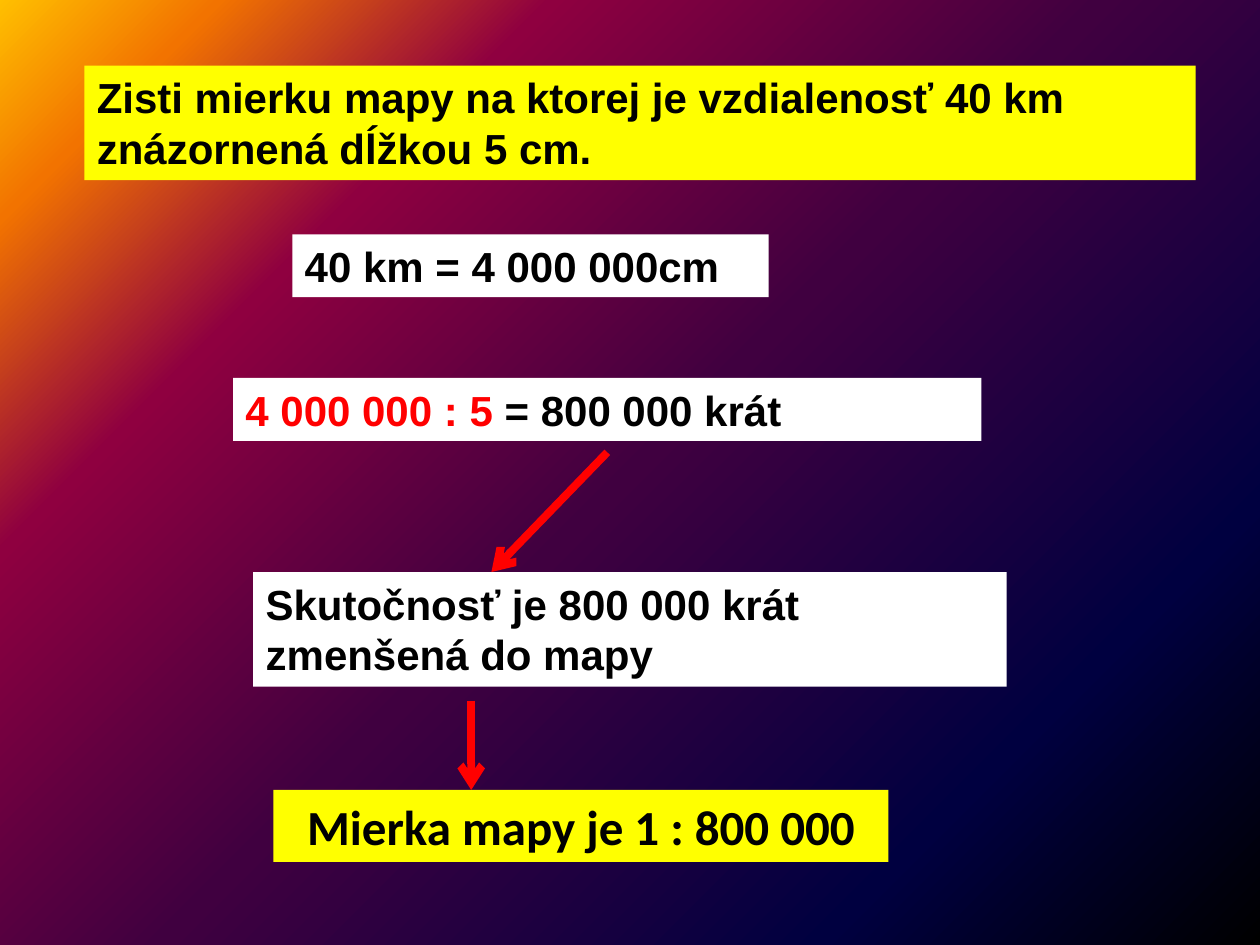
"""Build a slide that works out a map scale step by step."""
from typing import NamedTuple

from pptx import Presentation
from pptx.dml.color import RGBColor as RGB
from pptx.enum.shapes import MSO_CONNECTOR as Conn
from pptx.enum.text import MSO_AUTO_SIZE as AutoSize, PP_ALIGN as Align
from pptx.oxml import parse_xml
from pptx.oxml.ns import nsdecls
from pptx.util import Inches, Pt

COLS, ROWS = 100, 75
WIDTH, HEIGHT = Inches(10), Inches(7.5)
COLORS = {"yellow": "FFFF00", "white": "FFFFFF", "black": "000000", "red": "FF0000"}
GRADIENT = {0: "000000", 20: "000040", 50: "400040", 75: "8F0040", 90: "F27300", 100: "FFBF00"}


class Box(NamedTuple):
    col: float
    row: float
    cols: float
    rows: float
    fill: str
    runs: tuple[tuple[str, str], ...]
    style: dict = {}


class Arrow(NamedTuple):
    col1: float
    row1: float
    col2: float
    row2: float


BOXES = (
    Box(6.7, 5.2, 88.2, 9.1, "yellow",
        (("Zisti mierku mapy na ktorej je vzdialenosť 40 km znázornená dĺžkou 5 cm.", "black"),)),
    Box(23.2, 18.6, 37.8, 5, "white", (("40 km = 4 000 000cm", "black"),)),
    Box(20.1, 45.4, 59.8, 9.1, "white",
        (("Skutočnosť je 800 000 krát zmenšená do mapy", "black"),)),
    Box(18.5, 30, 59.4, 5, "white",
        (("4 000 000 : 5 ", "red"), ("= 800 000 krát", "black"))),
    Box(21.7, 62.7, 48.8, 5.7, "yellow", (("Mierka mapy je 1 : 800 000", "black"),),
        {"size": 28, "font": "Calibri", "align": Align.CENTER, "before": 0}),
)
ARROWS = (Arrow(48.2, 35.9, 39, 45.4), Arrow(37.4, 55.6, 37.4, 62.7))


def x(col: float) -> int:
    """Return the horizontal position of a grid column."""
    return round(WIDTH * col / COLS)


def y(row: float) -> int:
    """Return the vertical position of a grid row."""
    return round(HEIGHT * row / ROWS)


def paint_background(s) -> None:
    """Fill the slide with a gradient that spreads from the bottom right corner."""
    stops = "".join(f'<a:gs pos="{pos * 1000}"><a:srgbClr val="{color}"/></a:gs>'
                    for pos, color in GRADIENT.items())
    s.element.cSld.insert(0, parse_xml(
        f'<p:bg {nsdecls("p", "a")}><p:bgPr><a:gradFill rotWithShape="0">'
        f'<a:gsLst>{stops}</a:gsLst><a:path path="circle">'
        '<a:fillToRect l="100000" t="100000"/></a:path></a:gradFill>'
        '<a:effectLst/></p:bgPr></p:bg>'))


def write(p, runs, *, size: float = 24, font: str = "Arial",
          align: Align = Align.LEFT, before: int = 50) -> None:
    """Write bold coloured runs, with space before in percent of a line."""
    p.alignment = align
    if before:
        p._p.get_or_add_pPr().append(parse_xml(
            f'<a:spcBef {nsdecls("a")}><a:spcPct val="{before * 1000}"/></a:spcBef>'))
    for text, color in runs:
        r = p.add_run()
        r.text = text
        r.font.name, r.font.size, r.font.bold = font, Pt(size), True
        r.font.color.rgb = RGB.from_string(COLORS[color])


def draw_box(s, box: Box) -> None:
    """Draw a filled text box."""
    sp = s.shapes.add_textbox(x(box.col), y(box.row), x(box.cols), y(box.rows))
    sp.fill.solid()
    sp.fill.fore_color.rgb = RGB.from_string(COLORS[box.fill])
    tf = sp.text_frame
    tf.word_wrap = True
    tf.auto_size = AutoSize.SHAPE_TO_FIT_TEXT
    write(tf.paragraphs[0], box.runs, **box.style)


def draw_arrow(s, arrow: Arrow) -> None:
    """Draw a thick red arrow."""
    cxn = s.shapes.add_connector(Conn.STRAIGHT, x(arrow.col1), y(arrow.row1),
                                 x(arrow.col2), y(arrow.row2))
    cxn.line.width = Pt(4.5)
    cxn.line.color.rgb = RGB.from_string(COLORS["red"])
    cxn.line._get_or_add_ln().append(parse_xml(f'<a:tailEnd {nsdecls("a")} type="arrow"/>'))
    cxn._element.spPr.append(parse_xml(f'<a:effectLst {nsdecls("a")}/>'))


def main() -> None:
    """Build and save the slide."""
    prs = Presentation()
    prs.slide_width, prs.slide_height = WIDTH, HEIGHT
    s = prs.slides.add_slide(prs.slide_layouts[6])
    paint_background(s)
    for box in BOXES:
        draw_box(s, box)
    for arrow in ARROWS:
        draw_arrow(s, arrow)
    prs.save("out.pptx")


if __name__ == "__main__":
    main()
